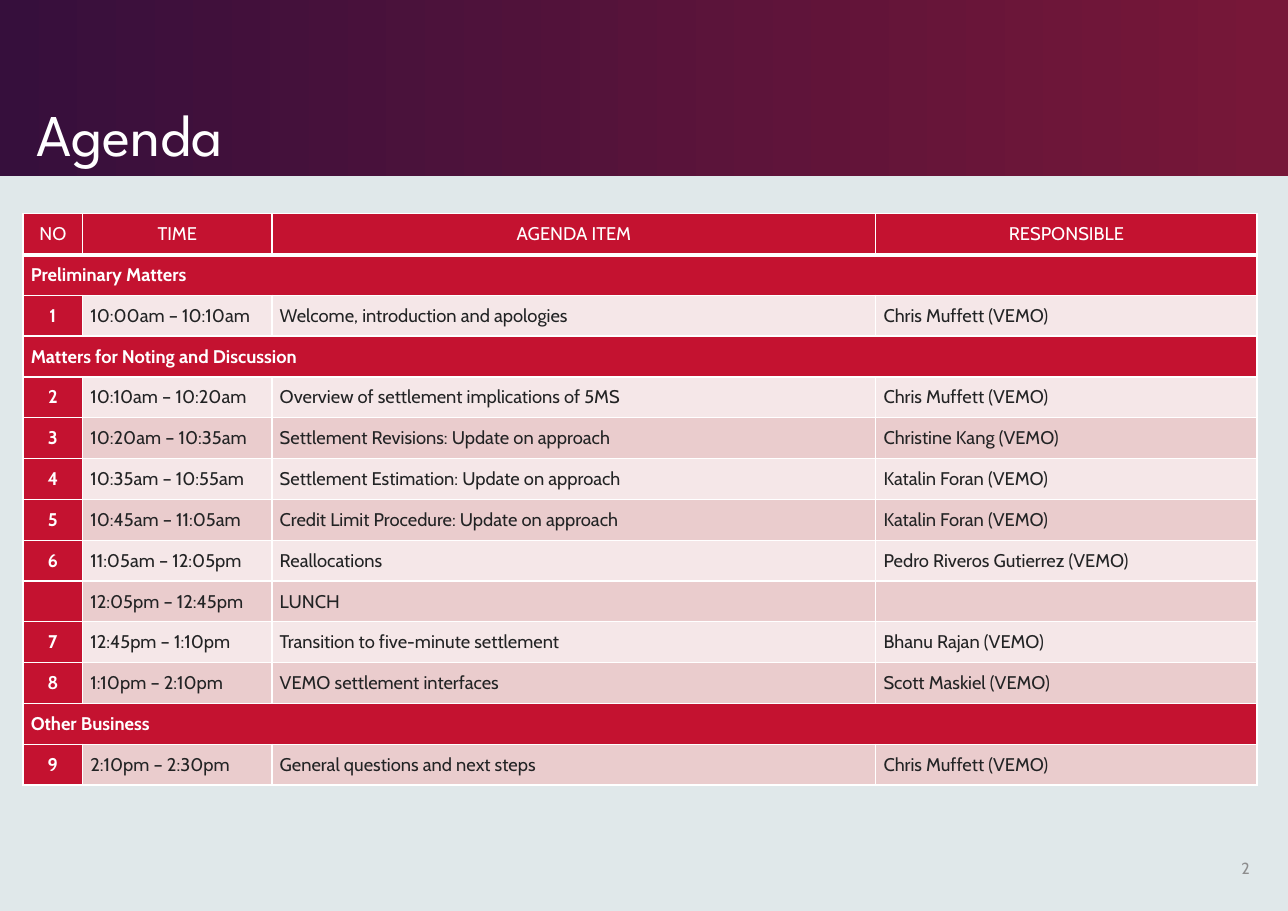
from lxml import etree
from pptx import Presentation
from pptx import util as u
from pptx.dml.color import RGBColor
from pptx.enum import shapes, text
from pptx.oxml.ns import qn

# Content: a one-item row is a section heading across the table
TITLE = "Agenda"
PAGE_NUMBER = "2"
AGENDA = [
    ("NO", "TIME", "AGENDA ITEM", "RESPONSIBLE"),
    ("Preliminary Matters",),
    ("1", "10:00am – 10:10am", "Welcome, introduction and apologies", "Chris Muffett (VEMO)"),
    ("Matters for Noting and Discussion",),
    ("2", "10:10am – 10:20am", "Overview of settlement implications of 5MS", "Chris Muffett (VEMO)"),
    ("3", "10:20am – 10:35am", "Settlement Revisions: Update on approach", "Christine Kang (VEMO)"),
    ("4", "10:35am – 10:55am", "Settlement Estimation: Update on approach", "Katalin Foran (VEMO)"),
    ("5", "10:45am – 11:05am", "Credit Limit Procedure: Update on approach", "Katalin Foran (VEMO)"),
    ("6", "11:05am – 12:05pm", "Reallocations", "Pedro Riveros Gutierrez (VEMO)"),
    ("", "12:05pm – 12:45pm", "LUNCH", ""),
    ("7", "12:45pm – 1:10pm", "Transition to five-minute settlement", "Bhanu Rajan (VEMO)"),
    ("8", "1:10pm – 2:10pm", "VEMO settlement interfaces", "Scott Maskiel (VEMO)"),
    ("Other Business",),
    ("9", "2:10pm – 2:30pm", "General questions and next steps", "Chris Muffett (VEMO)"),
]

# Style and grid, in inches
COLORS = {
    "background": "E0E8EA", "band start": "360F3C", "band end": "771738",
    "red": "C41230", "light": "F5E7E8", "dark": "EACCCD",
    "white": "FFFFFF", "ink": "222324", "grey": "8D8D8E",
}
WIDTH, HEIGHT = 11.69, 8.27
BAND_HEIGHT = 1.6
COLUMNS = (0.54, 1.72, 5.48, 3.46)
ROW_HEIGHT = 5.19 / len(AGENDA)
TABLE_LEFT, TABLE_TOP = 0.21, 1.94


def color(name):
    return RGBColor.from_string(COLORS[name])


def write(frame, words, size=12, font="Cabin", ink="ink", bold=False,
          align="LEFT", anchor="MIDDLE", spacing=None):
    frame.word_wrap = True
    frame.vertical_anchor = text.MSO_ANCHOR[anchor]
    paragraph = frame.paragraphs[0]
    paragraph.alignment = text.PP_ALIGN[align]
    paragraph.line_spacing = spacing
    run = paragraph.add_run()
    run.text = words
    run.font.size, run.font.name, run.font.bold = u.Pt(size), font, bold
    run.font.color.rgb = color(ink)


def add_text(slide, box, words, **style):
    shape = slide.shapes.add_textbox(*map(u.Inches, box))
    write(shape.text_frame, words, **style)


def format_cell(cell, fill, bottom=1):
    properties = cell._tc.get_or_add_tcPr()
    for side, points in (("L", 1), ("R", 1), ("T", 1), ("B", bottom)):
        line = etree.SubElement(properties, qn(f"a:ln{side}"), w=str(u.Pt(points)))
        solid = etree.SubElement(line, qn("a:solidFill"))
        etree.SubElement(solid, qn("a:srgbClr"), val=COLORS["white"])
    cell.fill.solid()
    cell.fill.fore_color.rgb = color(fill)
    cell.margin_left = cell.margin_right = u.Inches(0.07)
    cell.margin_top = cell.margin_bottom = 0


def add_agenda(slide):
    table = slide.shapes.add_table(
        len(AGENDA), len(COLUMNS), u.Inches(TABLE_LEFT), u.Inches(TABLE_TOP),
        u.Inches(sum(COLUMNS)), u.Inches(ROW_HEIGHT * len(AGENDA))).table
    table.first_row = table.horz_banding = False
    for column, width in zip(table.columns, COLUMNS):
        column.width = u.Inches(width)

    for r, entries in enumerate(AGENDA):
        table.rows[r].height = u.Inches(ROW_HEIGHT)
        header, section = r == 0, len(entries) == 1
        for c in range(len(COLUMNS)):
            red = header or section or c == 0
            band = "dark" if r % 2 else "light"
            format_cell(table.cell(r, c), "red" if red else band, 3 if header else 1)
        if section:
            table.cell(r, 0).merge(table.cell(r, len(COLUMNS) - 1))
        for c, words in enumerate(entries):
            centred = header or (c == 0 and not section)
            cell = table.cell(r, c)
            cell.vertical_anchor = text.MSO_ANCHOR.MIDDLE
            write(cell.text_frame, words, bold=c == 0 and not header,
                  ink="white" if header or c == 0 else "ink",
                  align="CENTER" if centred else "LEFT")


def main():
    presentation = Presentation()
    presentation.slide_width = u.Inches(WIDTH)
    presentation.slide_height = u.Inches(HEIGHT)
    slide = presentation.slides.add_slide(presentation.slide_layouts[6])
    slide.background.fill.solid()
    slide.background.fill.fore_color.rgb = color("background")

    # Title band
    band = slide.shapes.add_shape(shapes.MSO_SHAPE.RECTANGLE, 0, 0,
                                  u.Inches(WIDTH), u.Inches(BAND_HEIGHT))
    band.shadow.inherit = False
    band.line.fill.background()
    band.fill.gradient()
    band.fill.gradient_angle = 0
    for stop, position, name in zip(band.fill.gradient_stops, (0, 0.99),
                                    ("band start", "band end")):
        stop.position = position
        stop.color.rgb = color(name)
    add_text(slide, (0.23, 0.16, 8.63, 1.43), TITLE, size=38.6,
             font="League Spartan", ink="white", anchor="BOTTOM", spacing=0.9)

    # Agenda table and page number
    add_agenda(slide)
    add_text(slide, (10.89, 7.66, 0.55, 0.44), PAGE_NUMBER, size=10.5,
             ink="grey", align="RIGHT")
    presentation.save("out.pptx")


if __name__ == "__main__":
    main()
